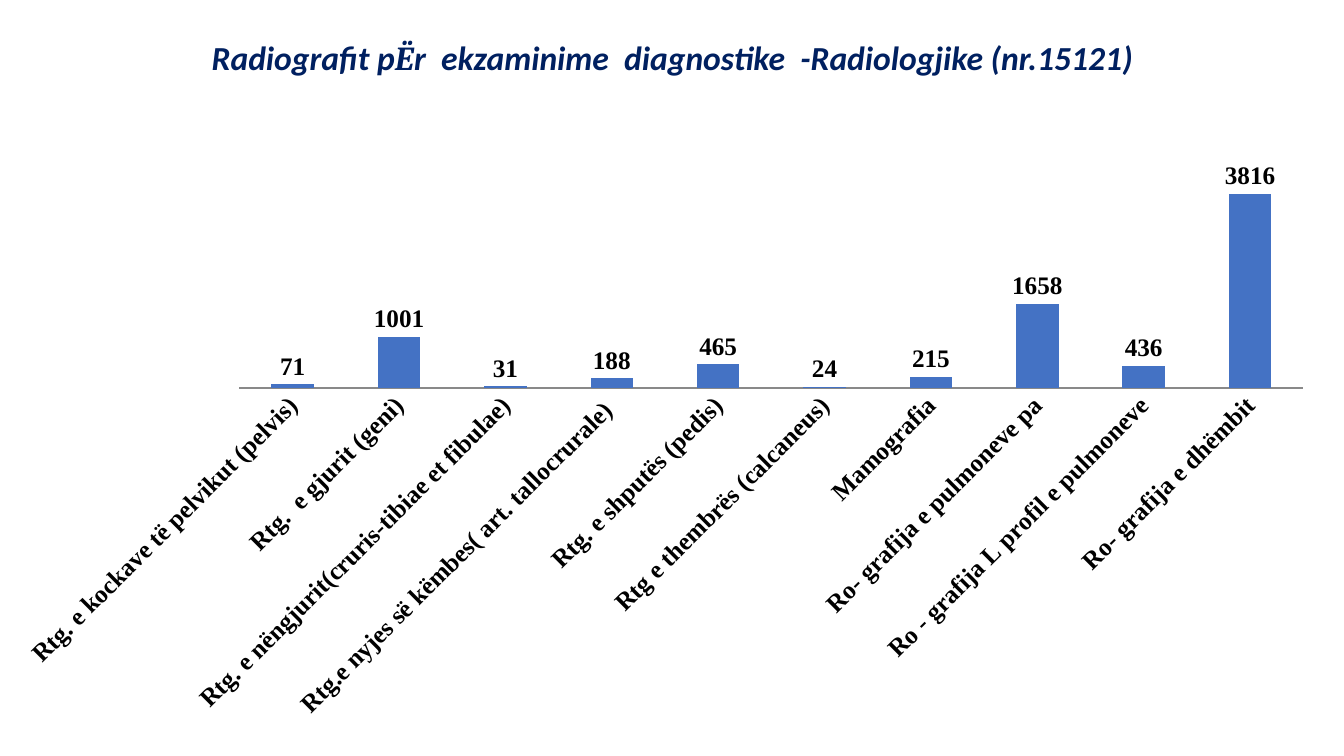
from pptx import Presentation
from pptx import util as u
from pptx.chart import data as chart_data
from pptx.dml import color
from pptx.enum import chart as charts, text

EXAMINATIONS = {
    "Rtg. e kockave të pelvikut (pelvis)": 71,
    "Rtg.  e gjurit (geni)": 1001,
    "Rtg. e nëngjurit(cruris-tibiae et fibulae)": 31,
    "Rtg.e nyjes së këmbes( art. tallocrurale) ": 188,
    "Rtg. e shputës (pedis)": 465,
    "Rtg e thembrës (calcaneus)": 24,
    "Mamografia": 215,
    "Ro- grafija e pulmoneve pa": 1658,
    "Ro - grafija L profil e pulmoneve": 436,
    "Ro- grafija e dhëmbit": 3816,
}
TITLE = [
    ("Radiografit p", "Calibri"),
    ("Ë", "Cambria"),
    ("r  ekzaminime  diagnostike  -Radiologjike (nr.15121)", "Calibri"),
]


def rgb(value):
    return color.RGBColor.from_string(value)


def style_font(font, name, size, hue, italic=False):
    font.name = name
    font.size = u.Pt(size)
    font.bold = True
    font.italic = italic
    font.color.rgb = rgb(hue)


def add_title(page, left, top, width, height):
    box = page.shapes.add_textbox(*map(u.Inches, (left, top, width, height)))
    frame = box.text_frame
    frame.word_wrap = True
    frame.vertical_anchor = text.MSO_ANCHOR.MIDDLE
    para = frame.paragraphs[0]
    para.alignment = text.PP_ALIGN.CENTER
    para.line_spacing = 0.9
    for words, typeface in TITLE:
        span = para.add_run()
        span.text = words
        style_font(span.font, typeface, 24, "002060", italic=True)


def add_examinations_chart(page, left, top, width, height):
    data = chart_data.CategoryChartData(number_format="0")
    data.categories = list(EXAMINATIONS)
    data.add_series("Series 1", list(EXAMINATIONS.values()))
    chart = page.shapes.add_chart(
        charts.XL_CHART_TYPE.COLUMN_CLUSTERED,
        *map(u.Inches, (left, top, width, height)), data).chart
    chart.has_legend = False
    chart.has_title = False
    chart.font.name = "Calibri"
    chart.font.size = u.Pt(18)
    chart.font.color.rgb = rgb("000000")

    chart.value_axis.visible = False
    chart.value_axis.has_major_gridlines = False
    names = chart.category_axis
    names.major_tick_mark = charts.XL_TICK_MARK.NONE
    names.format.line.color.rgb = rgb("898989")
    names.format.line.width = u.Pt(0.75)
    style_font(names.tick_labels.font, "Times New Roman", 18, "000000")
    names.tick_labels.font._element.getparent().getparent().getparent().bodyPr.set(
        "rot", str(-45 * 60000))

    plot = chart.plots[0]
    plot.gap_width = 150
    plot.overlap = -25
    plot.vary_by_categories = False
    series = plot.series[0]
    series.format.fill.solid()
    series.format.fill.fore_color.rgb = rgb("4472C4")
    labels = series.data_labels
    labels.show_value = True
    labels.number_format = "0"
    labels.number_format_is_linked = False
    labels.position = charts.XL_LABEL_POSITION.OUTSIDE_END
    style_font(labels.font, "Times New Roman", 18, "000000")


def main():
    deck = Presentation()
    deck.slide_width = u.Inches(13.33)
    deck.slide_height = u.Inches(7.5)
    page = deck.slides.add_slide(deck.slide_layouts[6])
    add_examinations_chart(page, 0, 1.46, 13.19, 5.78)
    add_title(page, 0.92, 0.18, 11.5, 0.83)
    deck.save("out.pptx")


if __name__ == "__main__":
    main()
